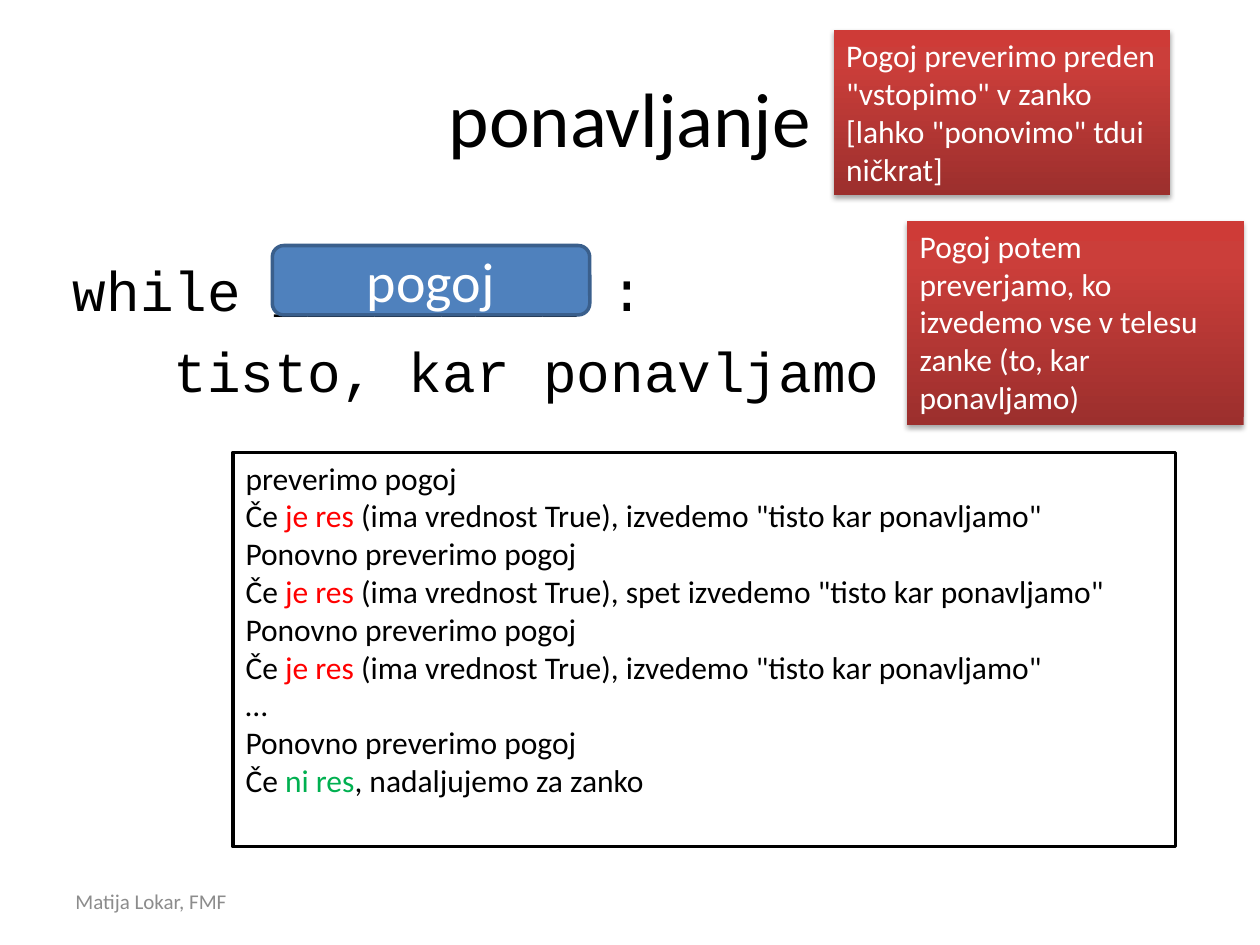
from lxml import etree
from pptx import Presentation
from pptx.dml.color import RGBColor
from pptx.enum.shapes import MSO_SHAPE
from pptx.enum.text import MSO_ANCHOR, PP_ALIGN
from pptx.oxml.ns import qn
from pptx.util import Cm, Pt

RECT, ROUNDED = MSO_SHAPE.RECTANGLE, MSO_SHAPE.ROUNDED_RECTANGLE
TOP, MIDDLE = MSO_ANCHOR.TOP, MSO_ANCHOR.MIDDLE
LEFT, CENTER = PP_ALIGN.LEFT, PP_ALIGN.CENTER
BLACK, WHITE, RED, GREEN = "000000", "FFFFFF", "FF0000", "00B050"
CALLOUT_STOPS = [(0, "9C2F2D"), (80, "CB3E3A"), (100, "CE3B37")]


def rgb(value):
    return RGBColor.from_string(value)


def write(s, paragraphs, size, color=BLACK, font="Calibri", align=LEFT, anchor=TOP):
    """Fill s with paragraphs, each a list of (text, colour or None) runs."""
    tf = s.text_frame
    tf.word_wrap = True
    tf.vertical_anchor = anchor
    for i, runs in enumerate(paragraphs):
        p = tf.paragraphs[0] if i == 0 else tf.add_paragraph()
        p.alignment = align
        for text, run_color in runs:
            r = p.add_run()
            r.text = text
            for name, value in {"name": font, "size": Pt(size)}.items():
                setattr(r.font, name, value)
            r.font.color.rgb = rgb(run_color or color)
    return tf


prs = Presentation()
prs.slide_width, prs.slide_height = Cm(25.4), Cm(19.05)
shapes = prs.slides.add_slide(prs.slide_layouts[6]).shapes

# Title, code and footer
title = shapes.add_textbox(Cm(1.27), Cm(0.76), Cm(22.86), Cm(3.18))
write(title, [[("ponavljanje", None)]], 44, align=CENTER, anchor=MIDDLE)

code = shapes.add_textbox(Cm(1.22), Cm(1.65), Cm(23.62), Cm(12.57))
tf = write(code, [[("while _________ :", None)], [("tisto, kar ponavljamo", None)]],
           32, font="Courier New")
tf.margin_top = Cm(3.5)
loop_body = tf.paragraphs[1]
loop_body.space_before = Pt(8)
loop_body._p.get_or_add_pPr().set("marL", str(Cm(2.03)))

footer = shapes.add_textbox(Cm(1.27), Cm(17.65), Cm(5.92), Cm(1.02))
write(footer, [[("Matija Lokar, FMF", None)]], 12, "8C8C8C", anchor=MIDDLE)

# Condition button and explanation of the loop
condition = [[("pogoj", None)]]
check_again = [("Ponovno preverimo pogoj", None)]
if_true = [("Če ", None), ("je res ", RED)]
run_body = if_true + [('(ima vrednost True), izvedemo "tisto kar ponavljamo"', None)]
run_body_again = if_true + [('(ima vrednost True), spet izvedemo "tisto kar ponavljamo"', None)]
steps = [
    [("preverimo pogoj", None)], run_body,
    check_again, run_body_again,
    check_again, run_body,
    [("…", None)],
    check_again, [("Če ", None), ("ni res", GREEN), (", nadaljujemo za zanko", None)],
]
boxes = [
    (ROUNDED, (5.49, 4.95, 6.4, 1.4), "4F81BD", "3A5F8C", condition,
     {"size": 32, "color": WHITE, "align": CENTER, "anchor": MIDDLE}),
    (RECT, (4.7, 9.12, 19, 7.95), WHITE, BLACK, steps, {"size": 18}),
]
for kind, place, fill, line, paragraphs, style in boxes:
    s = shapes.add_shape(kind, *map(Cm, place))
    s.shadow.inherit = False
    s.fill.solid()
    s.fill.fore_color.rgb = rgb(fill)
    s.line.color.rgb = rgb(line)
    s.line.width = Pt(2)
    write(s, paragraphs, **style)

# Red callouts with gradient and soft shadow
callouts = [
    (18.29, 4.45, 4.11, ["Pogoj potem preverjamo, ko izvedemo vse v telesu zanke (to, kar ponavljamo)"]),
    (16.81, 0.61, 3.33, ['Pogoj preverimo preden "vstopimo" v zanko',
                         '[lahko "ponovimo" tdui ničkrat]']),
]
for left, top, height, lines in callouts:
    s = shapes.add_shape(RECT, Cm(left), Cm(top), Cm(6.78), Cm(height))
    s.line.fill.background()
    s.fill.gradient()
    s.fill.gradient_angle = 90
    stops = s._element.spPr.find(".//" + qn("a:gsLst"))
    for stop in list(stops):
        stops.remove(stop)
    for percent, color in CALLOUT_STOPS:
        stop = etree.SubElement(stops, qn("a:gs"), pos=str(percent * 1000))
        etree.SubElement(stop, qn("a:srgbClr"), val=color)

    s.shadow.inherit = False
    effects = s._element.spPr.find(qn("a:effectLst"))
    shadow = etree.SubElement(effects, qn("a:outerShdw"), blurRad=str(Pt(3.1)),
                              dist=str(Pt(1.8)), dir="5400000", rotWithShape="0")
    shade = etree.SubElement(shadow, qn("a:srgbClr"), val=BLACK)
    etree.SubElement(shade, qn("a:alpha"), val="35000")
    write(s, [[(line, None)] for line in lines], 18, WHITE)

prs.save("out.pptx")
